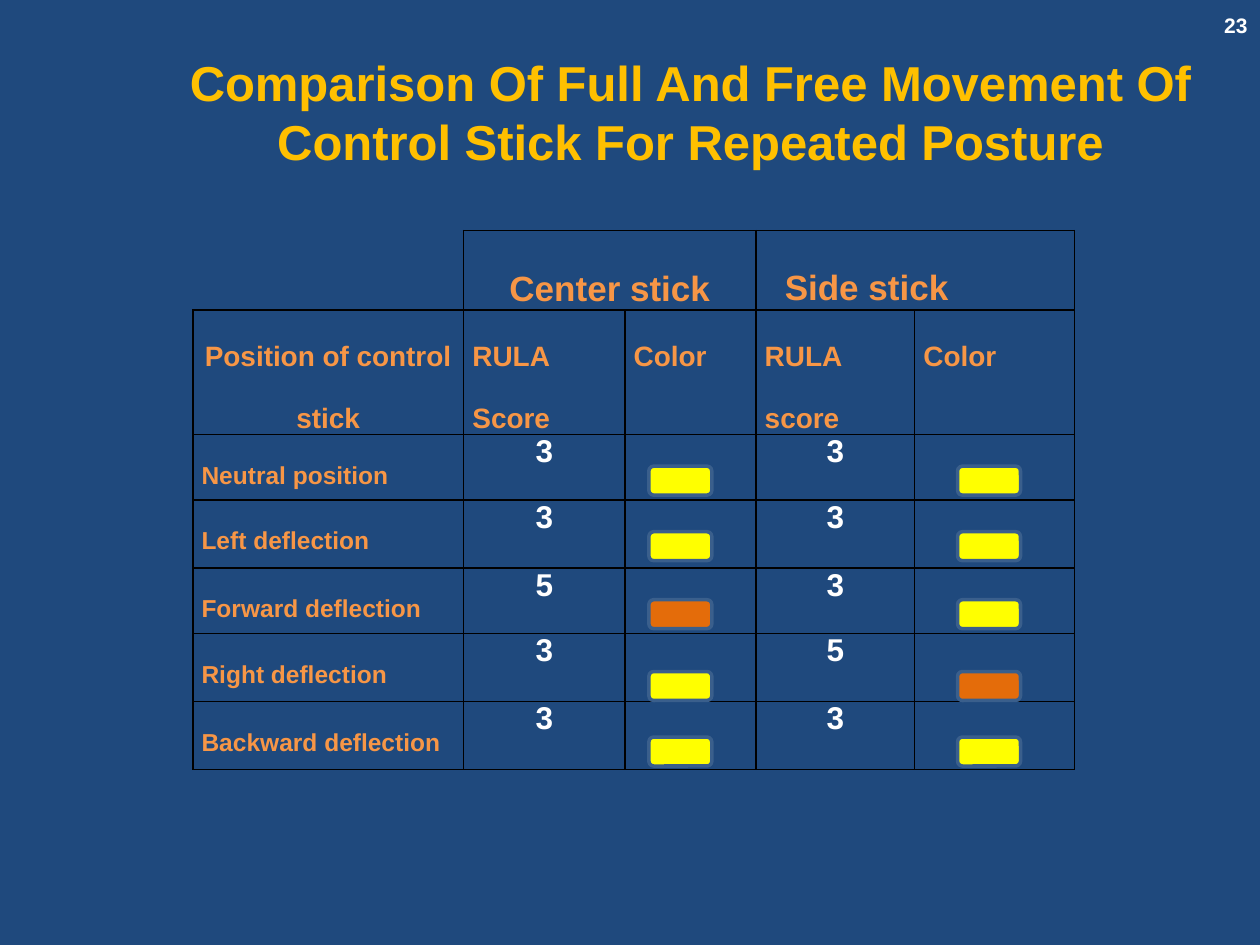
from lxml import etree
from pptx import Presentation
from pptx.dml.color import RGBColor
from pptx.enum.shapes import MSO_SHAPE
from pptx.enum.text import MSO_ANCHOR, PP_ALIGN
from pptx.oxml.ns import qn
from pptx.util import Inches, Pt

LEFT, CENTER, RIGHT, JUSTIFY = PP_ALIGN.LEFT, PP_ALIGN.CENTER, PP_ALIGN.RIGHT, PP_ALIGN.JUSTIFY
MIDDLE, TOP = MSO_ANCHOR.MIDDLE, MSO_ANCHOR.TOP
ROUNDED = MSO_SHAPE.ROUNDED_RECTANGLE

NAVY, GOLD, ORANGE, WHITE = "1F497D", "FFC000", "F79646", "FFFFFF"
BLACK, OUTLINE = "000000", "3A5F8C"
SCORE_COLORS = {"3": "FFFF00", "5": "E46C0A"}


def color(hex_string):
    return RGBColor.from_string(hex_string)


def write(text_frame, text, size, hex_string, alignment):
    text_frame.text = text
    paragraph = text_frame.paragraphs[0]
    paragraph.alignment = alignment
    font = paragraph.runs[0].font
    font.name, font.size, font.bold = "Arial", Pt(size), True
    font.color.rgb = color(hex_string)
    return paragraph


presentation = Presentation()
presentation.slide_width, presentation.slide_height = Inches(10), Inches(7.5)
slide = presentation.slides.add_slide(presentation.slide_layouts[6])
slide.background.fill.solid()
slide.background.fill.fore_color.rgb = color(NAVY)

# Score table
header = ["Position of control stick", "RULA Score", "Color", "RULA score", "Color"]
scores = [
    ("Neutral position", "3", "3"),
    ("Left deflection", "3", "3"),
    ("Forward deflection", "5", "3"),
    ("Right deflection", "3", "5"),
    ("Backward deflection", "3", "3"),
]
column_widths = [2.15, 1.28, 1.04, 1.26, 1.27]
row_heights = [0.63, 0.54, 0.52, 0.54, 0.52, 0.54, 0.54]

table = slide.shapes.add_table(
    len(row_heights), len(column_widths), Inches(1.53), Inches(1.83),
    Inches(sum(column_widths)), Inches(sum(row_heights))).table
table.first_row = table.horz_banding = False
for column, width in zip(table.columns, column_widths):
    column.width = Inches(width)
for row, height in zip(table.rows, row_heights):
    row.height = Inches(height)

table_text = [["", "Center stick", "", "", ""], header]
table_text += [[position, center, "", side, ""] for position, center, side in scores]
for row_index, row_text in enumerate(table_text):
    for column_index, text in enumerate(row_text):
        cell = table.cell(row_index, column_index)
        cell_properties = cell._tc.get_or_add_tcPr()
        for side in ("lnL", "lnR", "lnT", "lnB"):
            border = etree.SubElement(cell_properties, qn(f"a:{side}"), w=str(Pt(1)))
            if row_index == column_index == 0 and side in ("lnL", "lnT"):
                etree.SubElement(border, qn("a:noFill"))
            else:
                line_fill = etree.SubElement(border, qn("a:solidFill"))
                etree.SubElement(line_fill, qn("a:srgbClr"), val=BLACK)
        cell.fill.background()
        if not text:
            continue
        cell.margin_left = cell.margin_right = Inches(0.07)
        cell.margin_top = cell.margin_bottom = Inches(0)
        if text in SCORE_COLORS:
            write(cell.text_frame, text, 18, WHITE, CENTER)
            continue
        size = {0: 20, 1: 16}.get(row_index, 14)
        centered = row_index == 0 or text == header[0]
        paragraph = write(cell.text_frame, text, size, ORANGE, CENTER if centered else JUSTIFY)
        paragraph.line_spacing = 2.0
for first_column in (1, 3):
    table.cell(0, first_column).merge(table.cell(0, first_column + 1))

# Color swatches, one for each score
swatch_tops = [3.7, 4.22, 4.76, 5.33, 5.85]
for top, (position, *stick_scores) in zip(swatch_tops, scores):
    for left, score in zip((5.15, 7.6), stick_scores):
        swatch = slide.shapes.add_shape(
            ROUNDED, Inches(left), Inches(top), Inches(0.5), Inches(0.23))
        swatch.shadow.inherit = False
        swatch.fill.solid()
        swatch.fill.fore_color.rgb = color(SCORE_COLORS[score])
        swatch.line.color.rgb = color(OUTLINE)
        swatch.line.width = Pt(2)

# Title, page number and the second stick heading
title = "Comparison Of Full And Free Movement Of Control Stick For Repeated Posture"
labels = [
    (title, (0.98, 0.26, 9, 1.25), 28, GOLD, CENTER, MIDDLE, True),
    ("23", (9.33, 0, 0.67, 0.4), 12, WHITE, RIGHT, MIDDLE, True),
    ("Side stick", (6.13, 2.06, 1.51, 0.44), 20, ORANGE, LEFT, TOP, False),
]
for text, box, size, hex_string, alignment, anchor, wraps in labels:
    text_frame = slide.shapes.add_textbox(*map(Inches, box)).text_frame
    text_frame.word_wrap = wraps
    text_frame.vertical_anchor = anchor
    write(text_frame, text, size, hex_string, alignment)

presentation.save("out.pptx")
